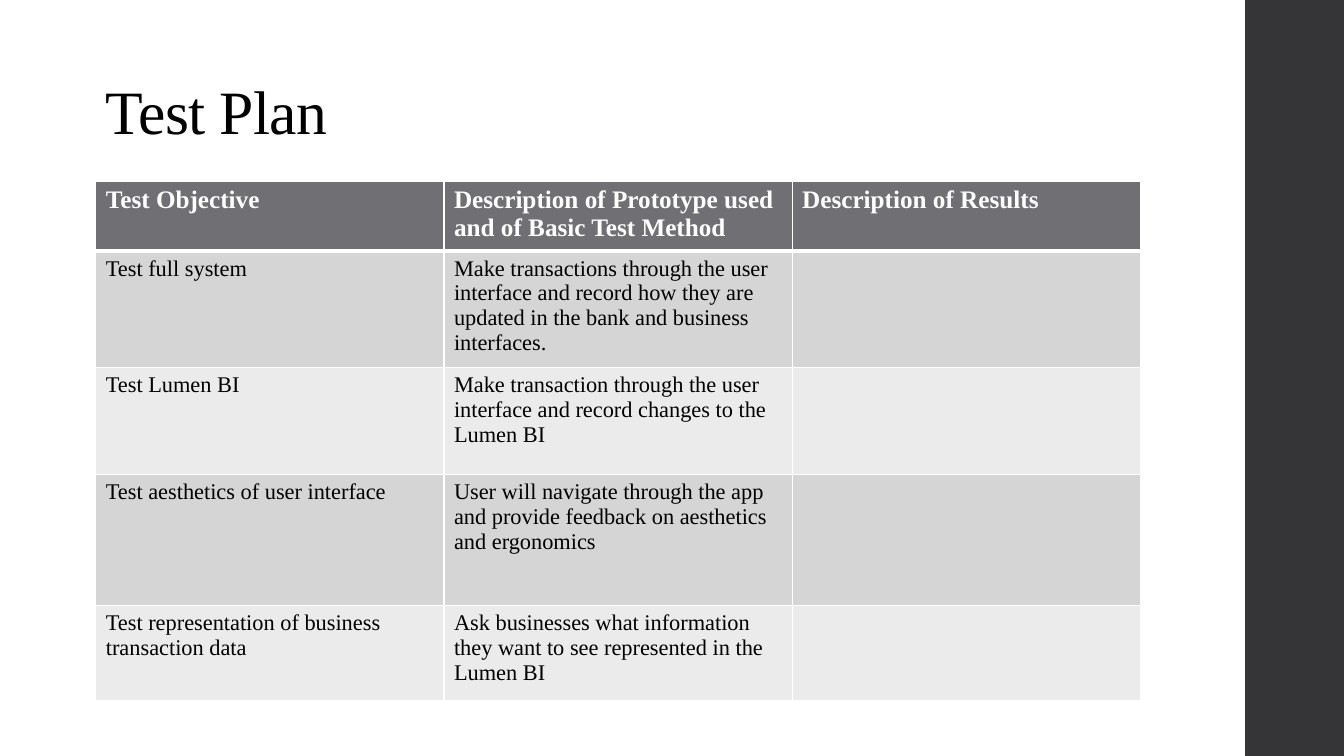
from lxml import etree
from pptx import Presentation
from pptx.dml.color import RGBColor
from pptx.enum.shapes import MSO_SHAPE
from pptx.enum.text import MSO_ANCHOR, PP_ALIGN
from pptx.oxml.ns import qn
from pptx.util import Inches, Pt

RECTANGLE = MSO_SHAPE.RECTANGLE
BOTTOM = MSO_ANCHOR.BOTTOM
LEFT = PP_ALIGN.LEFT
FONT = "Times New Roman"
WHITE, BLACK = "FFFFFF", "000000"
HEADER_FILL, BAND_FILLS = "6F6F74", ("EBEBEB", "D5D5D6")
MARGIN = 0.95
TABLE_WIDTH = 10.36
ROW_HEIGHTS = (0.69, 1.16, 1.06, 1.3, 0.94)
ROWS = (
    ("Test Objective",
     "Description of Prototype used and of Basic Test Method",
     "Description of Results"),
    ("Test full system",
     "Make transactions through the user interface and record how they are "
     "updated in the bank and business interfaces.", ""),
    ("Test Lumen BI",
     "Make transaction through the user interface and record changes to the "
     "Lumen BI", ""),
    ("Test aesthetics of user interface",
     "User will navigate through the app and provide feedback on aesthetics "
     "and ergonomics", ""),
    ("Test representation of business transaction data",
     "Ask businesses what information they want to see represented in the "
     "Lumen BI", ""),
)


def color(hex_string):
    return RGBColor.from_string(hex_string)


def add_borders(cell, bottom_width):
    properties = cell._tc.get_or_add_tcPr()
    widths = {"a:lnL": 1, "a:lnR": 1, "a:lnT": 1, "a:lnB": bottom_width}
    for position, (side, width) in enumerate(widths.items()):
        line = etree.Element(qn(side), w=str(Pt(width)))
        fill = etree.SubElement(line, qn("a:solidFill"))
        etree.SubElement(fill, qn("a:srgbClr"), val=WHITE)
        properties.insert(position, line)


presentation = Presentation()
presentation.slide_width = Inches(13.33)
presentation.slide_height = Inches(7.5)
slide = presentation.slides.add_slide(presentation.slide_layouts[5])

side_band = slide.shapes.add_shape(
    RECTANGLE, Inches(12.35), 0, Inches(1), presentation.slide_height)
side_band.shadow.inherit = False
side_band.fill.solid()
side_band.fill.fore_color.rgb = color("353537")
side_band.line.fill.background()

title = slide.shapes.title
title.left, title.top = Inches(MARGIN), Inches(0.73)
title.width, title.height = Inches(5.56), Inches(0.79)
title.text_frame.text = "Test Plan"
title.text_frame.vertical_anchor = BOTTOM
paragraph = title.text_frame.paragraphs[0]
paragraph.alignment = LEFT
paragraph.line_spacing = 0.9
paragraph.font.name = FONT
paragraph.font.size = Pt(44)
paragraph.font.color.rgb = color(BLACK)
paragraph.runs[0].font._element.set("spc", "-50")

table = slide.shapes.add_table(
    len(ROWS), len(ROWS[0]), Inches(MARGIN), Inches(1.8),
    Inches(TABLE_WIDTH), Inches(sum(ROW_HEIGHTS))).table

for row_index, texts in enumerate(ROWS):
    is_header = row_index == 0
    table.rows[row_index].height = Inches(ROW_HEIGHTS[row_index])
    for column_index, text in enumerate(texts):
        cell = table.cell(row_index, column_index)
        cell.text = text
        cell.fill.solid()
        cell.fill.fore_color.rgb = color(
            HEADER_FILL if is_header else BAND_FILLS[row_index % 2])
        add_borders(cell, 3 if is_header else 1)
        paragraph = cell.text_frame.paragraphs[0]
        paragraph.font.name = FONT
        paragraph.font.size = Pt(18 if is_header else 16)
        paragraph.font.bold = is_header
        paragraph.font.color.rgb = color(WHITE if is_header else BLACK)

presentation.save("out.pptx")
